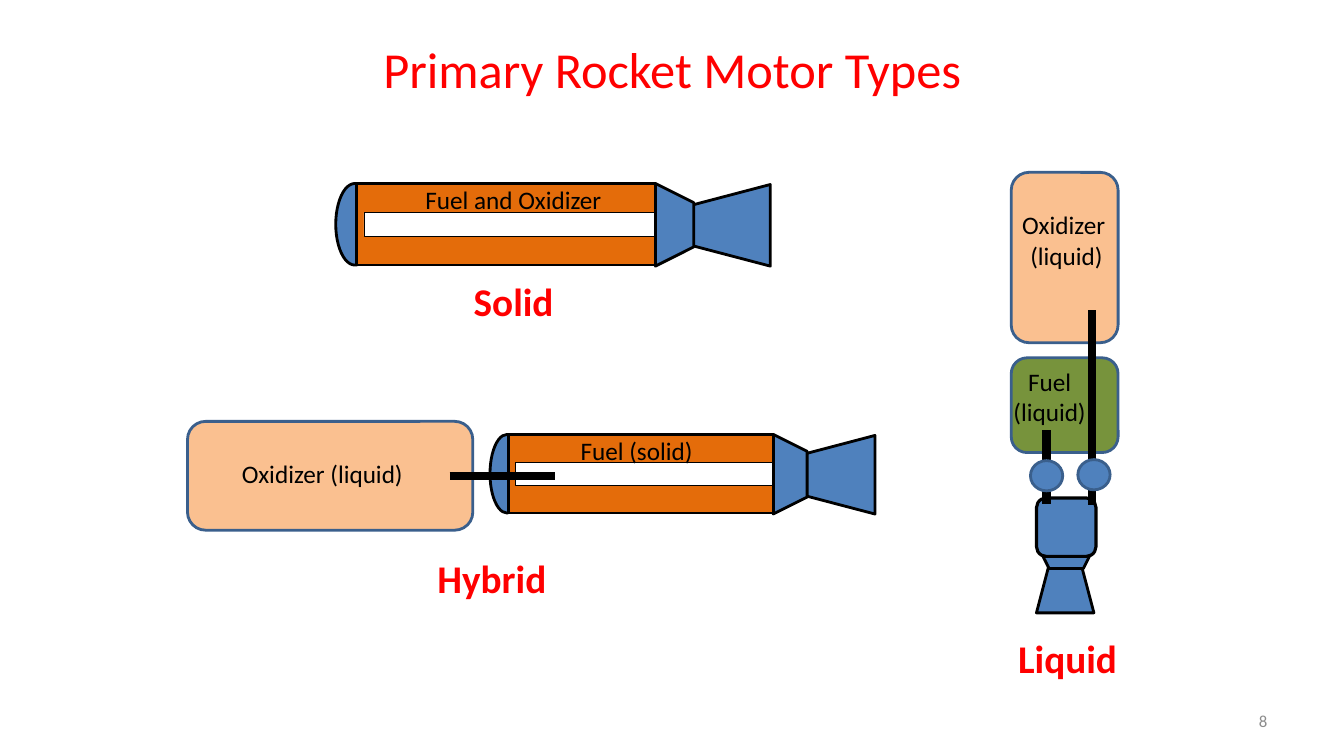
"""Build a slide comparing solid, hybrid and liquid rocket motors."""
from dataclasses import dataclass
from typing import Optional

from lxml.etree import SubElement
from pptx import Presentation
from pptx.dml.color import RGBColor
from pptx.enum.shapes import MSO_CONNECTOR, MSO_SHAPE
from pptx.enum.text import MSO_ANCHOR, MSO_AUTO_SIZE, PP_ALIGN
from pptx.oxml.ns import qn
from pptx.util import Inches, Pt

RED = RGBColor(0xFF, 0x00, 0x00)
BLACK = RGBColor(0x00, 0x00, 0x00)
WHITE = RGBColor(0xFF, 0xFF, 0xFF)
GREY = RGBColor(0x8C, 0x8C, 0x8C)
BLUE = RGBColor(0x4F, 0x81, 0xBD)
NAVY = RGBColor(0x3A, 0x5F, 0x8C)
ORANGE = RGBColor(0xE4, 0x6C, 0x0A)
PEACH = RGBColor(0xFA, 0xC0, 0x90)
GREEN = RGBColor(0x77, 0x93, 0x3C)

TRAPEZOID = MSO_SHAPE.TRAPEZOID
OVAL = MSO_SHAPE.OVAL
RECT = MSO_SHAPE.RECTANGLE
ROUNDED = MSO_SHAPE.ROUNDED_RECTANGLE


@dataclass
class Part:
    kind: MSO_SHAPE
    x: float
    y: float
    w: float
    h: float
    fill: RGBColor = BLUE
    line: RGBColor = BLACK
    weight: float = 2
    rotation: int = 0
    adjust: Optional[float] = None


@dataclass
class Motor:
    x: float
    y: float
    scale_x: float = 1
    scale_y: float = 1


@dataclass
class Pipe:
    x1: float
    y1: float
    x2: float
    y2: float


@dataclass
class Label:
    lines: list[str]
    x: float
    y: float
    w: float
    h: float
    size: int = 18
    color: RGBColor = BLACK
    bold: bool = False
    align: PP_ALIGN = PP_ALIGN.LEFT


MOTOR_PARTS = [
    Part(TRAPEZOID, 3.52, 0.01, 0.79, 0.81, rotation=270, adjust=0.263),
    Part(TRAPEZOID, 3.17, 0, 0.38, 0.82, rotation=90, adjust=0.5),
    Part(OVAL, 0, 0, 0.38, 0.81),
    Part(RECT, 0.21, 0, 2.96, 0.81, ORANGE),
    Part(RECT, 0.28, 0.29, 2.88, 0.23, WHITE, weight=0.25),
]


def heading(text: str, x: float, y: float, w: float, h: float) -> Label:
    return Label([text], x, y, w, h, 28, RED, True)


SOLID = [
    heading("Solid", 4.6, 2.7, 1.46, 0.81),
    Motor(3.33, 1.82),
    Label(["Fuel and Oxidizer"], 4.12, 1.78, 2.21, 0.4),
]
HYBRID = [
    Motor(4.86, 4.31, 0.886, 0.963),
    Part(ROUNDED, 1.86, 4.18, 2.83, 1.08, PEACH, NAVY, rotation=270),
    Pipe(4.46, 4.72, 5.5, 4.72),
    heading("Hybrid", 4.24, 5.45, 1.91, 0.78),
    Label(["Fuel (solid)"], 5.66, 4.27, 1.67, 0.4),
    Label(["Oxidizer (liquid)"], 2.3, 4.5, 2.21, 0.4),
]
LIQUID = [
    Part(TRAPEZOID, 10.28, 5.6, 0.57, 0.48, adjust=0.263),
    Part(TRAPEZOID, 10.29, 5.41, 0.57, 0.23, rotation=180, adjust=0.5),
    Part(ROUNDED, 10.28, 4.94, 0.59, 0.58, weight=2.25, rotation=90),
    Part(ROUNDED, 10.03, 3.55, 1.06, 0.94, GREEN, NAVY),
    Part(ROUNDED, 10.03, 1.71, 1.06, 1.69, PEACH, NAVY),
    Pipe(10.38, 4.27, 10.38, 5),
    Part(OVAL, 10.22, 4.57, 0.32, 0.3, line=NAVY),
    Pipe(10.83, 3.08, 10.83, 5.01),
    Part(OVAL, 10.69, 4.56, 0.32, 0.3, line=NAVY),
    heading("Liquid", 10, 6.24, 1.28, 0.48),
    Label(["Fuel", "(liquid)"], 9.77, 3.58, 1.28, 0.71, align=PP_ALIGN.CENTER),
    Label(["Oxidizer", " (liquid)"], 10.02, 2.03, 1.06, 0.71, align=PP_ALIGN.CENTER),
]
PAGE_NUMBER = Label(["8"], 9.56, 6.95, 3.11, 0.4, 12, GREY, align=PP_ALIGN.RIGHT)
TITLE = Label(["Primary Rocket Motor Types"], 3.48, 0.33, 6.38, 0.71, 36, RED,
              align=PP_ALIGN.CENTER)


def draw_part(s, part: Part, motor: Motor = Motor(0, 0)) -> None:
    w, h = part.w * motor.scale_x, part.h * motor.scale_y
    cx = motor.x + part.x * motor.scale_x + w / 2
    cy = motor.y + part.y * motor.scale_y + h / 2
    if part.rotation % 180:
        w, h = h, w
    sp = s.shapes.add_shape(part.kind, Inches(cx - w / 2), Inches(cy - h / 2),
                            Inches(w), Inches(h))
    sp.rotation = part.rotation
    sp.shadow.inherit = False
    if part.adjust is not None:
        sp.adjustments[0] = part.adjust
    sp.fill.solid()
    sp.fill.fore_color.rgb = part.fill
    sp.line.color.rgb = part.line
    sp.line.width = Pt(part.weight)


def draw_motor(s, motor: Motor) -> None:
    for part in MOTOR_PARTS:
        draw_part(s, part, motor)


def draw_pipe(s, pipe: Pipe) -> None:
    line = s.shapes.add_connector(MSO_CONNECTOR.STRAIGHT, Inches(pipe.x1), Inches(pipe.y1),
                                  Inches(pipe.x2), Inches(pipe.y2))
    line.line.color.rgb = BLACK
    line.line.width = Pt(6)
    SubElement(line._element.spPr, qn("a:effectLst"))


def write_label(sp, label: Label) -> None:
    sp.left, sp.top = Inches(label.x), Inches(label.y)
    sp.width, sp.height = Inches(label.w), Inches(label.h)
    tf = sp.text_frame
    tf.word_wrap = True
    tf.auto_size = MSO_AUTO_SIZE.NONE
    for i, text in enumerate(label.lines):
        p = tf.add_paragraph() if i else tf.paragraphs[0]
        p.alignment = label.align
        r = p.add_run()
        r.text = text
        r.font.name = "Calibri"
        r.font.size = Pt(label.size)
        r.font.bold = label.bold
        r.font.color.rgb = label.color


def draw_label(s, label: Label):
    sp = s.shapes.add_textbox(0, 0, 0, 0)
    write_label(sp, label)
    return sp


def main() -> None:
    prs = Presentation()
    prs.slide_width, prs.slide_height = Inches(13.33), Inches(7.5)
    s = prs.slides.add_slide(prs.slide_layouts[5])
    draw_label(s, PAGE_NUMBER).text_frame.vertical_anchor = MSO_ANCHOR.MIDDLE
    write_label(s.shapes.title, TITLE)
    s.shapes.title.text_frame.vertical_anchor = MSO_ANCHOR.TOP
    draw = {Part: draw_part, Motor: draw_motor, Pipe: draw_pipe, Label: draw_label}
    for item in SOLID + HYBRID + LIQUID:
        draw[type(item)](s, item)
    prs.save("out.pptx")


if __name__ == "__main__":
    main()
